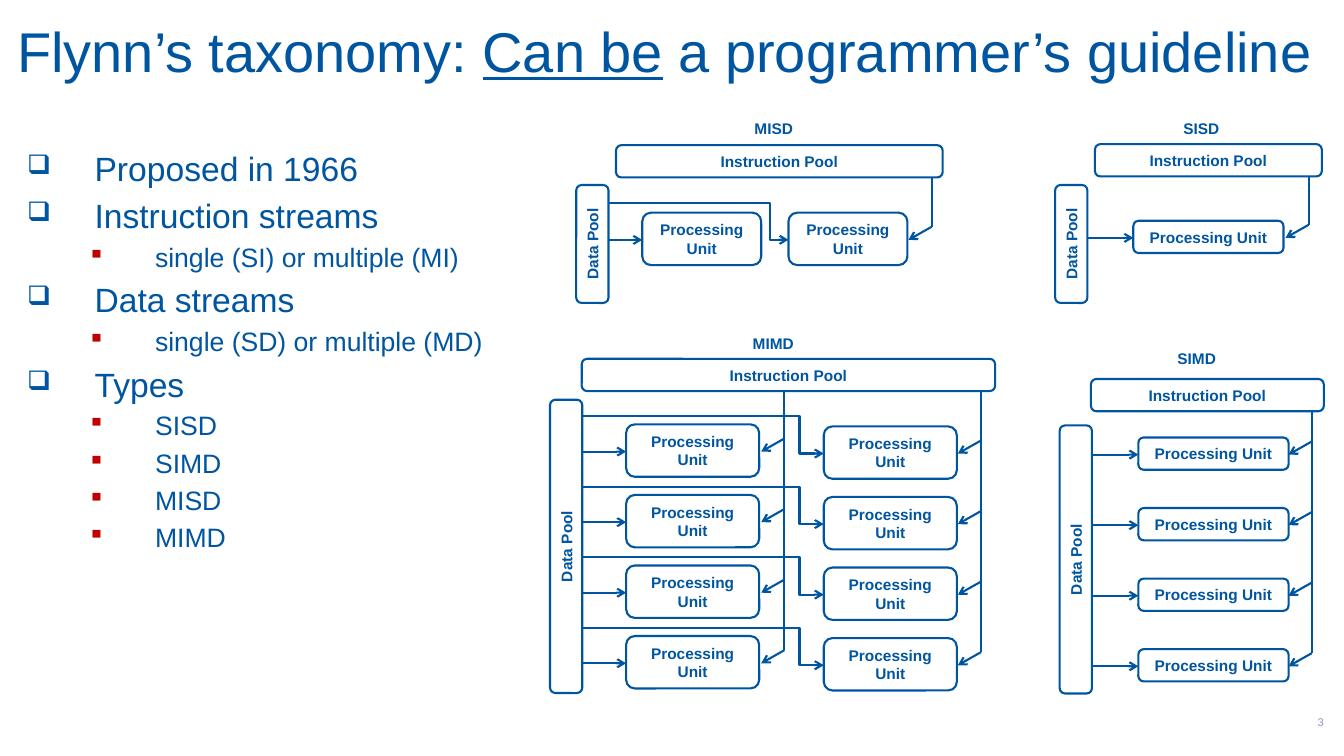
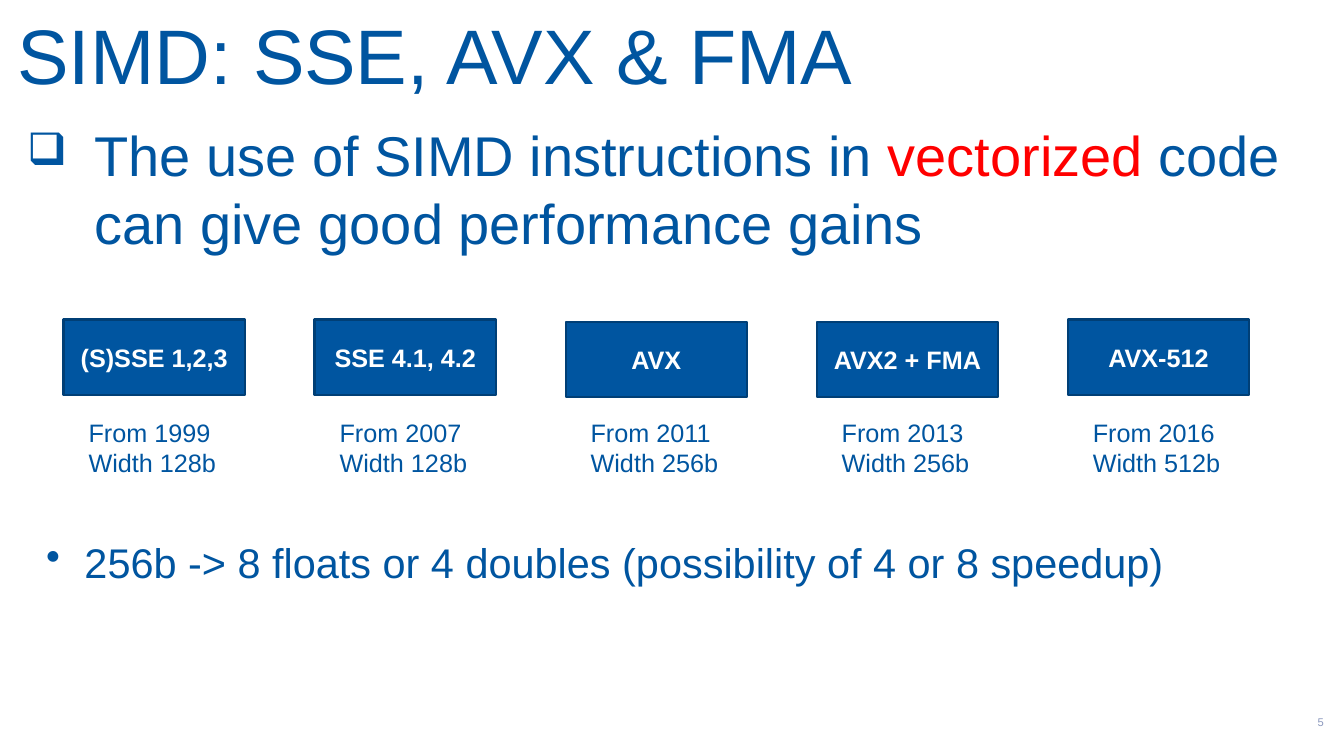
from lxml.etree import SubElement
from pptx import Presentation
from pptx.dml.color import RGBColor
from pptx.enum.shapes import MSO_CONNECTOR, MSO_SHAPE
from pptx.enum.text import MSO_ANCHOR, PP_ALIGN
from pptx.oxml.ns import qn
from pptx.util import Pt

PIXEL = 9144
FONT = "Arial"
BLUE = RGBColor(0x00, 0x55, 0xA0)
DARK_BLUE = RGBColor(0x00, 0x3F, 0x76)
DARK_RED = RGBColor(0xC0, 0x00, 0x00)
RED = RGBColor(0xFF, 0x00, 0x00)
GREY = RGBColor(0x8C, 0x99, 0xBE)
WHITE = RGBColor(0xFF, 0xFF, 0xFF)

SQUARE = {"character": "❑", "left": 72, "hanging": 67, "percent": 80, "color": BLUE}
SMALL_SQUARE = {"character": "▪", "left": 132, "hanging": 67, "percent": 90, "color": DARK_RED}
DOT = {"character": "•", "left": 38, "hanging": 38, "percent": 100, "color": BLUE}


def px(*lengths):
    return [length * PIXEL for length in lengths]


def set_bullet(paragraph, character, left, hanging, percent, color):
    properties = paragraph._p.get_or_add_pPr()
    properties.set("marL", str(left * PIXEL))
    properties.set("indent", str(-hanging * PIXEL))
    bullet_color = SubElement(properties, qn("a:buClr"))
    SubElement(bullet_color, qn("a:srgbClr"), val=str(color))
    SubElement(properties, qn("a:buSzPct"), val=str(percent * 1000))
    SubElement(properties, qn("a:buChar"), char=character)


def write(paragraph, text, size=18, color=BLUE, bold=False, underline=False,
          align=PP_ALIGN.LEFT):
    paragraph.alignment = align
    run = paragraph.add_run()
    run.text = text
    run.font.name = FONT
    run.font.size = Pt(size)
    run.font.bold = bold
    run.font.underline = underline
    run.font.color.rgb = color


class Deck:
    def __init__(self, width, height):
        self.presentation = Presentation()
        self.presentation.slide_width, self.presentation.slide_height = px(width, height)
        self.slide = None

    def new_slide(self, number):
        self.slide = self.presentation.slides.add_slide(self.presentation.slide_layouts[6])
        frame = self.text_frame((1250, 696, 73, 40), MSO_ANCHOR.MIDDLE)
        write(frame.paragraphs[0], number, size=8, color=GREY, align=PP_ALIGN.RIGHT)

    def text_frame(self, bounds, anchor=MSO_ANCHOR.TOP):
        frame = self.slide.shapes.add_textbox(*px(*bounds)).text_frame
        frame.word_wrap = True
        frame.vertical_anchor = anchor
        return frame

    def title(self, bounds, runs, size):
        frame = self.text_frame(bounds, MSO_ANCHOR.MIDDLE)
        frame.margin_left, frame.margin_right = px(5, 5)
        for text, changes in runs:
            write(frame.paragraphs[0], text, size=size, **changes)

    def paragraphs(self, bounds, items):
        frame = self.text_frame(bounds)
        for index, (bullet, size, runs) in enumerate(items):
            paragraph = frame.add_paragraph() if index else frame.paragraphs[0]
            if bullet:
                set_bullet(paragraph, **bullet)
                if index:
                    paragraph.space_before = Pt(round(size * 0.2, 1))
            for text, changes in runs:
                write(paragraph, text, size=size, **changes)

    def box(self, bounds, text, kind=MSO_SHAPE.ROUNDED_RECTANGLE, fill=WHITE, line=BLUE,
            color=BLUE, size=11, rotation=0):
        shape = self.slide.shapes.add_shape(kind, *px(*bounds))
        shape.shadow.inherit = False
        shape.rotation = rotation
        shape.fill.solid()
        shape.fill.fore_color.rgb = fill
        shape.line.color.rgb = line
        shape.line.width = Pt(1.5)
        frame = shape.text_frame
        frame.word_wrap = True
        frame.vertical_anchor = MSO_ANCHOR.MIDDLE
        write(frame.paragraphs[0], text, size=size, color=color, bold=True,
              align=PP_ALIGN.CENTER)

    def vertical_box(self, bounds, text):
        left, top, width, height = bounds
        shift = (height - width) // 2
        self.box((left - shift, top + shift, height, width), text, rotation=270)

    def label(self, bounds, text):
        frame = self.text_frame(bounds)
        write(frame.paragraphs[0], text, size=11, bold=True, align=PP_ALIGN.CENTER)

    def line(self, start, end, arrow=True, bend=None):
        kind = MSO_CONNECTOR.STRAIGHT if bend is None else MSO_CONNECTOR.ELBOW
        connector = self.slide.shapes.add_connector(kind, *px(*start, *end))
        connector.line.color.rgb = BLUE
        connector.line.width = Pt(1.5)
        properties = connector._element.spPr
        if arrow:
            SubElement(properties.find(qn("a:ln")), qn("a:tailEnd"), type="arrow")
        SubElement(properties, qn("a:effectLst"))
        if bend is not None:
            share = round((bend - start[0]) / (end[0] - start[0]) * 100000)
            values = properties.find(qn("a:prstGeom")).get_or_add_avLst()
            SubElement(values, qn("a:gd"), name="adj1", fmla=f"val {share}")

    def unit_column(self, first_unit, source, rows=1, bus=None, bus_top=0, bend=None):
        left, top, width, height = first_unit
        for row in range(rows):
            unit_top = top + 70 * row
            inlet = unit_top + height // 2 + 1
            self.box((left, unit_top, width, height), "Processing Unit")
            source_y = inlet if bend is None else inlet - 37
            self.line((source, source_y), (left, inlet), bend=bend)
            if bus is not None:
                self.line((bus, inlet - 13), (bus - 23, inlet))
        if bus is not None:
            self.line((bus, bus_top), (bus, inlet - 13), arrow=False)

    def diagram(self, name, label, instructions, data, columns):
        self.box(instructions, "Instruction Pool")
        self.vertical_box(data, "Data Pool")
        for column in columns:
            self.unit_column(source=data[0] + data[2], bus_top=instructions[1] + instructions[3],
                             **column)
        self.label(label, name)


def taxonomy_slide(deck):
    deck.new_slide("3")
    deck.title((12, 1, 1309, 98), [("Flynn’s taxonomy: ", {}), ("Can be", {"underline": True}),
                                   (" a programmer’s guideline", {})], 40)
    outline = [
        ("Proposed in 1966", []),
        ("Instruction streams", ["single (SI) or multiple (MI)"]),
        ("Data streams", ["single (SD) or multiple (MD)"]),
        ("Types", ["SISD", "SIMD", "MISD", "MIMD"]),
    ]
    items = []
    for heading, details in outline:
        items.append((SQUARE, 24, [(heading, {})]))
        items += [(SMALL_SQUARE, 19, [(detail, {})]) for detail in details]
    deck.paragraphs((12, 142, 503, 512), items)

    deck.diagram("SIMD", (1060, 341, 254, 29), (1082, 376, 231, 32), (1051, 422, 32, 266), [
        {"first_unit": (1129, 434, 149, 32), "rows": 4, "bus": 1301}])
    deck.diagram("SISD", (1055, 113, 273, 29), (1086, 143, 225, 32), (1046, 184, 32, 117), [
        {"first_unit": (1124, 219, 149, 32), "bus": 1298}])
    deck.diagram("MISD", (631, 113, 273, 29), (611, 144, 324, 32), (571, 184, 32, 117), [
        {"first_unit": (637, 211, 118, 52)},
        {"first_unit": (782, 211, 118, 52), "bus": 924, "bend": 764}])
    deck.diagram("MIMD", (640, 327, 254, 29), (577, 356, 410, 32), (545, 397, 32, 291), [
        {"first_unit": (621, 421, 132, 52), "rows": 4, "bus": 778},
        {"first_unit": (817, 423, 132, 52), "rows": 4, "bus": 973, "bend": 793}])


def extensions_slide(deck):
    deck.new_slide("5")
    deck.title((12, 10, 1312, 87), [("SIMD: SSE, AVX & FMA", {})], 55.2)
    deck.paragraphs((12, 115, 1301, 151), [
        (SQUARE, 40, [("The use of SIMD instructions in ", {}), ("vectorized ", {"color": RED}),
                      ("code can give good performance gains", {})])])
    extensions = [
        ("(S)SSE 1,2,3", 1999, 128, 317),
        ("SSE 4.1, 4.2", 2007, 128, 317),
        ("AVX", 2011, 256, 319),
        ("AVX2 + FMA", 2013, 256, 319),
        ("AVX-512", 2016, 512, 317),
    ]
    for index, (name, year, width, top) in enumerate(extensions):
        left = 63 + 249 * index
        deck.box((left, top, 180, 75), name, kind=MSO_SHAPE.RECTANGLE, fill=BLUE,
                 line=DARK_BLUE, color=WHITE, size=18)
        deck.paragraphs((left + 15, 409, 150, 71), [
            (None, 18, [(f"From {year}", {})]), (None, 18, [(f"Width {width}b", {})])])
    deck.paragraphs((36, 528, 1213, 70), [
        (DOT, 29.6, [("256b -> 8 floats or 4 doubles (possibility of 4 or 8 speedup)", {})])])


def main():
    deck = Deck(1333, 750)
    taxonomy_slide(deck)
    extensions_slide(deck)
    deck.presentation.save("out.pptx")


if __name__ == "__main__":
    main()
